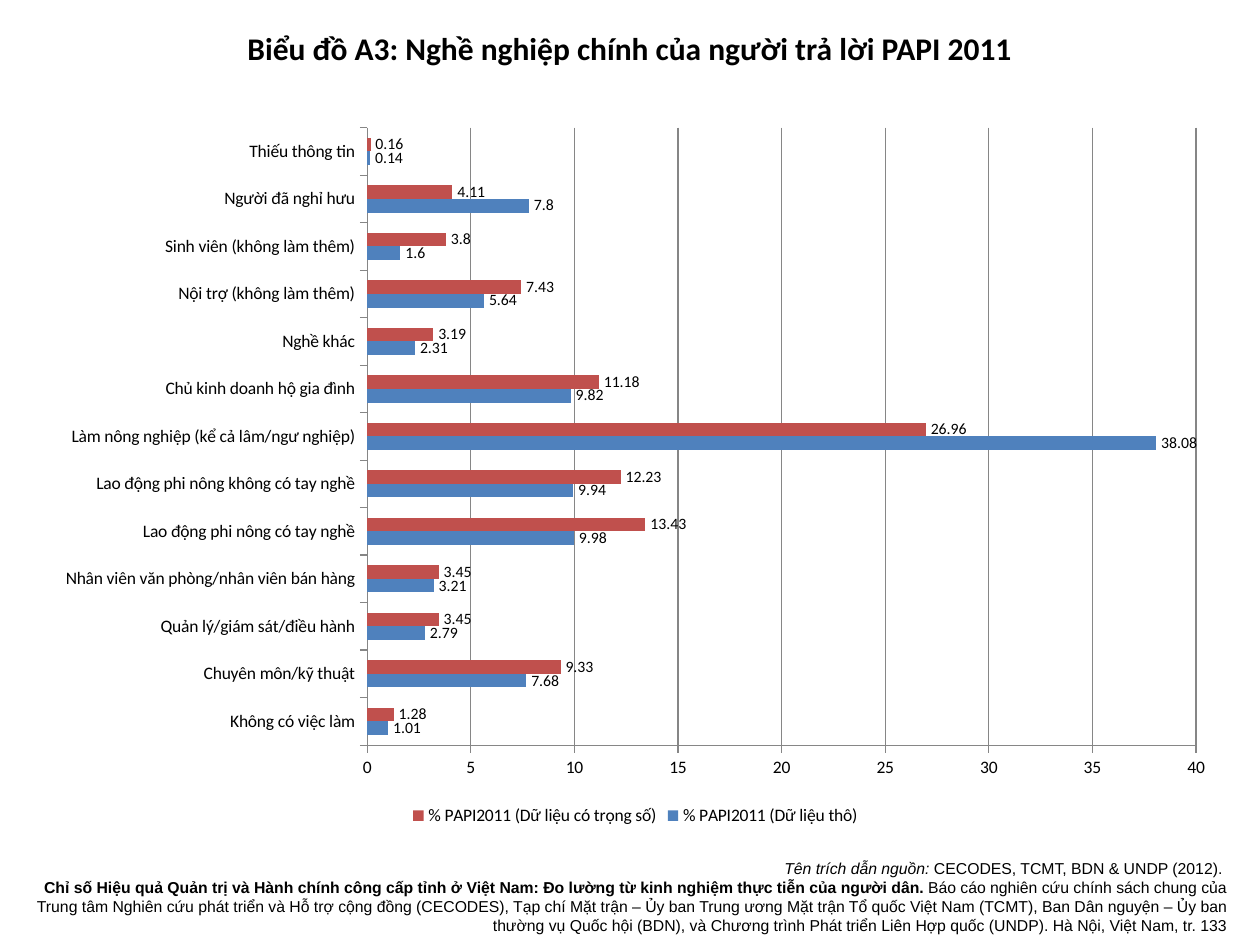
from pptx import Presentation
from pptx.chart.data import CategoryChartData
from pptx.dml.color import RGBColor
from pptx.enum.chart import (XL_CHART_TYPE, XL_LABEL_POSITION,
                             XL_LEGEND_POSITION, XL_TICK_MARK)
from pptx.enum.text import MSO_AUTO_SIZE, PP_ALIGN
from pptx.util import Inches, Pt

BLACK = RGBColor(0x00, 0x00, 0x00)
GRAY = RGBColor(0x86, 0x86, 0x86)
BLUE = RGBColor(0x4F, 0x81, 0xBD)
RED = RGBColor(0xC0, 0x50, 0x4D)

# Occupation, raw share, weighted share
OCCUPATIONS = [
    ("Không có việc làm", 1.01, 1.28),
    ("Chuyên môn/kỹ thuật", 7.68, 9.33),
    ("Quản lý/giám sát/điều hành", 2.79, 3.45),
    ("Nhân viên văn phòng/nhân viên bán hàng", 3.21, 3.45),
    ("Lao động phi nông có tay nghề", 9.98, 13.43),
    ("Lao động phi nông không có tay nghề", 9.94, 12.23),
    ("Làm nông nghiệp (kể cả lâm/ngư nghiệp)", 38.08, 26.96),
    ("Chủ kinh doanh hộ gia đình", 9.82, 11.18),
    ("Nghề khác", 2.31, 3.19),
    ("Nội trợ (không làm thêm)", 5.64, 7.43),
    ("Sinh viên (không làm thêm)", 1.6, 3.8),
    ("Người đã nghỉ hưu", 7.8, 4.11),
    ("Thiếu thông tin", 0.14, 0.16),
]
SERIES = [("% PAPI2011 (Dữ liệu thô)", BLUE),
          ("% PAPI2011 (Dữ liệu có trọng số)", RED)]

# Lines of (text, bold, italic) runs
CITATION = [
    [("Tên trích dẫn nguồn:", False, True),
     (" CECODES, TCMT, BDN & UNDP (2012). ", False, False)],
    [("Chỉ số Hiệu quả Quản trị và Hành chính công cấp tỉnh ở Việt Nam: "
      "Đo lường từ kinh nghiệm thực tiễn của người dân. ", True, False),
     ("Báo cáo nghiên cứu chính sách chung của Trung tâm Nghiên cứu phát triển "
      "và Hỗ trợ cộng đồng (CECODES), Tạp chí Mặt trận – Ủy ban Trung ương "
      "Mặt trận Tổ quốc Việt Nam (TCMT), Ban Dân nguyện – Ủy ban thường vụ "
      "Quốc hội (BDN), và Chương trình Phát triển Liên Hợp quốc (UNDP). "
      "Hà Nội, Việt Nam, tr. 133", False, False)],
]


class SlideBuilder:
    """Places elements on a 60 x 45 grid of the slide."""
    COLS, ROWS = 60, 45

    def __init__(self, prs):
        self.cell_w = prs.slide_width / self.COLS
        self.cell_h = prs.slide_height / self.ROWS
        self.s = prs.slides.add_slide(prs.slide_layouts[6])

    def box(self, col, row, cols, rows):
        return (round(col * self.cell_w), round(row * self.cell_h),
                round(cols * self.cell_w), round(rows * self.cell_h))

    def set_font(self, font, name, size):
        font.name, font.size = name, Pt(size)
        font.color.rgb = BLACK

    def text(self, grid, lines, name, size, align):
        tf = self.s.shapes.add_textbox(*self.box(*grid)).text_frame
        tf.word_wrap = True
        tf.auto_size = MSO_AUTO_SIZE.SHAPE_TO_FIT_TEXT
        p = tf.paragraphs[0]
        p.alignment = align
        self.set_font(p.font, name, size)
        for i, line in enumerate(lines):
            if i:
                p.add_line_break()
            for text, bold, italic in line:
                r = p.add_run()
                r.text = text
                self.set_font(r.font, name, size)
                r.font.bold, r.font.italic = bold, italic

    def bar_chart(self, grid, rows, series, name, size, label_size):
        cats, *columns = zip(*rows)
        data = CategoryChartData()
        data.categories = cats
        for (title, _), values in zip(series, columns):
            data.add_series(title, values)
        chart = self.s.shapes.add_chart(
            XL_CHART_TYPE.BAR_CLUSTERED, *self.box(*grid), data).chart
        self.set_font(chart.font, name, size)
        chart.has_title = False
        chart.has_legend = True
        chart.legend.position = XL_LEGEND_POSITION.BOTTOM
        chart.legend.include_in_layout = False

        for axis in (chart.category_axis, chart.value_axis):
            axis.major_tick_mark = XL_TICK_MARK.OUTSIDE
            axis.format.line.color.rgb = GRAY
        chart.category_axis.has_major_gridlines = False
        chart.value_axis.has_major_gridlines = True
        chart.value_axis.major_gridlines.format.line.color.rgb = GRAY
        chart.value_axis.minimum_scale = 0
        chart.value_axis.maximum_scale = 40
        chart.value_axis.major_unit = 5

        plot = chart.plots[0]
        plot.gap_width, plot.overlap = 150, 0
        plot.vary_by_categories = False
        for ser, (_, color) in zip(plot.series, series):
            ser.format.fill.solid()
            ser.format.fill.fore_color.rgb = color
            labels = ser.data_labels
            labels.show_value = True
            labels.position = XL_LABEL_POSITION.OUTSIDE_END
            self.set_font(labels.font, name, label_size)


def main():
    prs = Presentation()
    prs.slide_width, prs.slide_height = Inches(10), Inches(7.5)
    slide = SlideBuilder(prs)
    title = "Biểu đồ A3: Nghề nghiệp chính của người trả lời PAPI 2011"
    slide.text((4, 1.1, 52, 2.4), [[(title, True, False)]],
               "Calibri", 18, PP_ALIGN.CENTER)
    slide.bar_chart((2, 5.4, 56.5, 34.15), OCCUPATIONS, SERIES,
                    "Calibri", 10, 9)
    slide.text((1, 40.6, 58, 4.25), CITATION, "Arial", 9, PP_ALIGN.RIGHT)
    prs.save("out.pptx")


if __name__ == "__main__":
    main()
